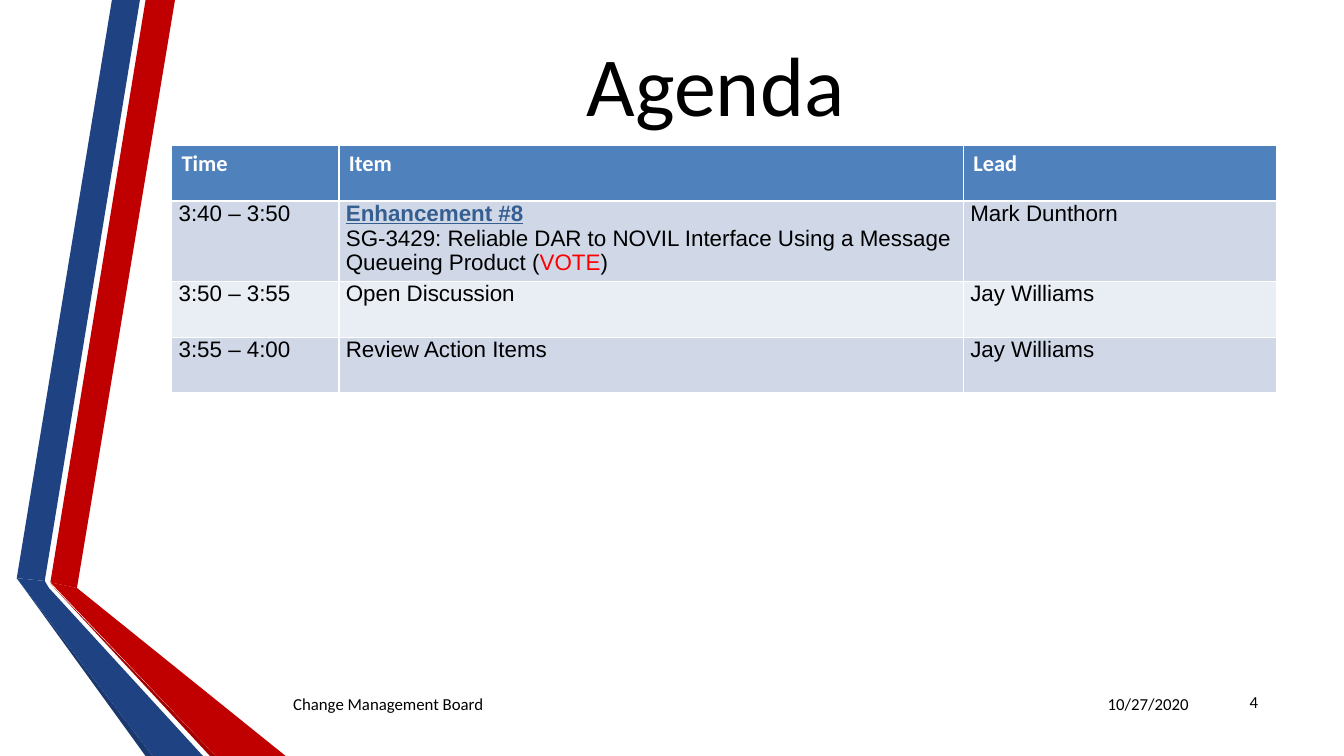
from pptx import Presentation
from pptx.dml.color import RGBColor
from pptx.enum.text import MSO_ANCHOR, PP_ALIGN
from pptx.util import Pt

COLORS = {
    "black": "000000", "white": "FFFFFF", "vote": "FF0000", "heading": "365F91",
    "header": "4F81BD", "odd row": "D0D8E8", "even row": "E9EDF4",
    "blue": "1F4283", "dark blue": "1B396F", "red": "C00000", "dark red": "A40000",
}

# Each corner is an offset in points from the area's top left.
RIBBONS = [
    ("red", [(36, 416.2), (55.4, 419.8), (124.6, 0), (104.4, 0)]),
    ("blue", [(100.1, 0), (79.9, 0), (11.5, 412.6), (31.7, 415.4)]),
    ("dark blue", [(11.5, 412.6), (104.4, 540), (108.7, 540)]),
    ("dark red", [(36, 416.9), (149.8, 540), (154.1, 540)]),
    ("red", [(36, 416.5), (154.1, 540), (203.8, 540), (55.4, 419.8)]),
    ("blue", [(145.4, 540), (34.6, 419.8), (31.7, 415.4), (11.5, 412.6), (108.7, 540)]),
]

COLUMN_WIDTHS = [119.5, 446, 223.5]
ROW_HEIGHTS = [39.6, 53.6, 39.6, 39.6]
HEADERS = ["Time", "Item", "Lead"]
AGENDA = [
    ("3:40 – 3:50", None, "Mark Dunthorn"),
    ("3:50 – 3:55", "Open Discussion", "Jay Williams"),
    ("3:55 – 4:00", "Review Action Items", "Jay Williams"),
]


def rgb(name):
    return RGBColor.from_string(COLORS[name])


def style_font(font, size, name="Calibri", color="black", bold=False):
    font.size = Pt(size)
    font.name = name
    font.bold = bold
    font.color.rgb = rgb(color)


def add_ribbons(slide, left, top):
    for color, corners in RIBBONS:
        points = [(left + x, top + y) for x, y in corners]
        builder = slide.shapes.build_freeform(*points[0], scale=Pt(1))
        builder.add_line_segments(points[1:], close=True)
        ribbon = builder.convert_to_shape()
        ribbon.shadow.inherit = False
        ribbon.fill.solid()
        ribbon.fill.fore_color.rgb = rgb(color)
        ribbon.line.fill.background()


def add_label(slide, box, text, size, alignment):
    frame = slide.shapes.add_textbox(*map(Pt, box)).text_frame
    frame.word_wrap = True
    frame.vertical_anchor = MSO_ANCHOR.MIDDLE
    frame.text = text
    para = frame.paragraphs[0]
    para.alignment = alignment
    style_font(para.runs[0].font, size)


def add_span(para, text, color="black", bold=False):
    span = para.add_run()
    span.text = text
    style_font(span.font, 16, "Arial", color, bold)
    return span


def fill_cell(cell, color):
    cell.fill.solid()
    cell.fill.fore_color.rgb = rgb(color)


def write_enhancement(frame):
    """Write the item that is put to a vote, with its underlined heading."""
    heading = add_span(frame.paragraphs[0], "Enhancement #8", "heading", True)
    heading.font.underline = True
    para = frame.add_paragraph()
    add_span(para, "SG-3429: Reliable DAR to NOVIL Interface Using a Message Queueing Product (")
    add_span(para, "VOTE", "vote")
    add_span(para, ")")


def add_agenda(slide, left, top):
    table = slide.shapes.add_table(
        len(ROW_HEIGHTS), len(COLUMN_WIDTHS), Pt(left), Pt(top),
        Pt(sum(COLUMN_WIDTHS)), Pt(sum(ROW_HEIGHTS))).table
    for column, width in zip(table.columns, COLUMN_WIDTHS):
        column.width = Pt(width)
    for row, height in zip(table.rows, ROW_HEIGHTS):
        row.height = Pt(height)

    for cell, text in zip(table.rows[0].cells, HEADERS):
        fill_cell(cell, "header")
        cell.text_frame.text = text
        style_font(cell.text_frame.paragraphs[0].runs[0].font, 16, color="white", bold=True)

    for number, entry in enumerate(AGENDA, start=1):
        for cell, text in zip(table.rows[number].cells, entry):
            fill_cell(cell, "odd row" if number % 2 else "even row")
            cell.margin_left = cell.margin_right = Pt(5)
            cell.margin_top = cell.margin_bottom = 0
            if text is None:
                write_enhancement(cell.text_frame)
            else:
                add_span(cell.text_frame.paragraphs[0], text)


def add_footer(slide, left, top):
    add_label(slide, (left, top, 558, 28.8), "Change Management Board", 12, PP_ALIGN.LEFT)
    add_label(slide, (left + 563.8, top, 90, 28.8), "10/27/2020", 12, PP_ALIGN.RIGHT)
    add_label(slide, (left + 660.3, top - 1.4, 43.2, 28.8), "4", 12, PP_ALIGN.RIGHT)


def main():
    deck = Presentation()
    deck.slide_width, deck.slide_height = Pt(960), Pt(540)
    slide = deck.slides.add_slide(deck.slide_layouts[6])
    add_ribbons(slide, 0, 0)
    add_label(slide, (116.6, 18.7, 789.1, 80.6), "Agenda", 60, PP_ALIGN.CENTER)
    add_agenda(slide, 122.6, 104)
    add_footer(slide, 202.3, 488.2)
    deck.save("out.pptx")


if __name__ == "__main__":
    main()
